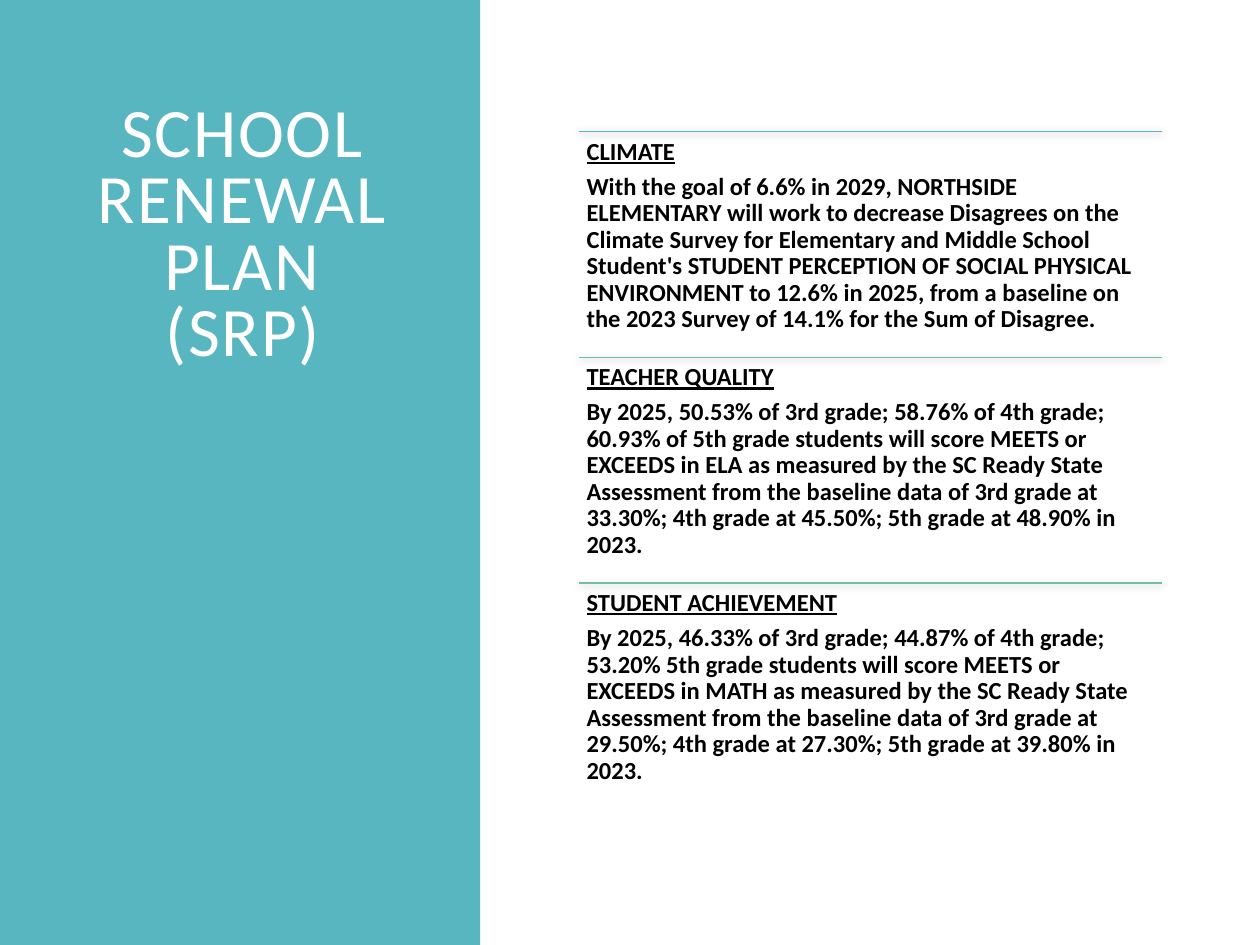
from dataclasses import dataclass
from lxml import etree
from pptx import Presentation
from pptx.dml.color import RGBColor as RGB
from pptx.enum import shapes, text
from pptx.oxml import ns
from pptx.util import Pt


@dataclass(frozen=True)
class Theme:
    font: str = "Calibri"
    teal: RGB = RGB(0x58, 0xB6, 0xC0)
    sea: RGB = RGB(0x67, 0xBE, 0xB5)
    green: RGB = RGB(0x75, 0xBD, 0xA7)
    white: RGB = RGB(255, 255, 255)
    black: RGB = RGB(0, 0, 0)
    head: float = 39.6
    body: float = 14


@dataclass(frozen=True)
class Box:
    left: float
    top: float
    wide: float
    high: float

    def pts(self):
        return [Pt(n) for n in (self.left, self.top, self.wide, self.high)]


THEME = Theme()
GOALS = [
    ("CLIMATE", THEME.teal,
     "With the goal of 6.6% in 2029, NORTHSIDE ELEMENTARY will work to "
     "decrease Disagrees on the Climate Survey for Elementary and Middle "
     "School Student's STUDENT PERCEPTION OF SOCIAL PHYSICAL ENVIRONMENT to "
     "12.6% in 2025, from a baseline on the 2023 Survey of 14.1% for the Sum "
     "of Disagree."),
    ("TEACHER QUALITY", THEME.sea,
     "By 2025, 50.53% of 3rd grade; 58.76% of 4th grade; 60.93% of 5th grade "
     "students will score MEETS or EXCEEDS in ELA as measured by the SC Ready "
     "State Assessment from the baseline data of 3rd grade at 33.30%; 4th "
     "grade at 45.50%; 5th grade at 48.90% in 2023."),
    ("STUDENT ACHIEVEMENT", THEME.green,
     "By 2025, 46.33% of 3rd grade; 44.87% of 4th grade; 53.20% 5th grade "
     "students will score MEETS or EXCEEDS in MATH as measured by the SC Ready "
     "State Assessment from the baseline data of 3rd grade at 29.50%; 4th "
     "grade at 27.30%; 5th grade at 39.80% in 2023."),
]


def inset(frame, side, top):
    frame.margin_left = frame.margin_right = Pt(side)
    frame.margin_top = frame.margin_bottom = Pt(top)
    frame.word_wrap = True
    frame.auto_size = text.MSO_AUTO_SIZE.NONE


def style(para, size, color, lead):
    para.font.name = THEME.font
    para.font.size = Pt(size)
    para.font.color.rgb = color
    para.line_spacing = lead


def shade(line):
    line._element.spPr.append(etree.fromstring(
        f'<a:effectLst {ns.nsdecls("a")}>'
        '<a:outerShdw blurRad="50800" dist="12700" dir="5400000" rotWithShape="0">'
        '<a:srgbClr val="000000"><a:alpha val="50000"/></a:srgbClr>'
        '</a:outerShdw></a:effectLst>'))


def banner(slide, box):
    panel = slide.shapes.add_shape(shapes.MSO_SHAPE.RECTANGLE, *box.pts())
    panel.shadow.inherit = False
    panel.fill.solid()
    panel.fill.fore_color.rgb = THEME.teal
    panel.line.fill.background()

    title = slide.shapes.title
    title.element.addprevious(panel.element)
    place = Box(box.left + 38, box.top + 50.4, 201.6, 438.4)
    title.left, title.top, title.width, title.height = place.pts()
    frame = title.text_frame
    frame.text = "SCHOOL RENEWAL PLAN (SRP)"
    inset(frame, 14, 9)
    frame.vertical_anchor = text.MSO_ANCHOR.TOP
    para = frame.paragraphs[0]
    para.alignment = text.PP_ALIGN.CENTER
    style(para, THEME.head, THEME.white, 0.8)
    para.runs[0].font._element.set("spc", "100")


def goal(group, box, name, color, words):
    y = Pt(box.top)
    line = group.shapes.add_connector(
        shapes.MSO_CONNECTOR.STRAIGHT, Pt(box.left), y, Pt(box.left + box.wide), y)
    line.line.color.rgb = color
    line.line.width = Pt(0.75)
    shade(line)

    frame = group.shapes.add_textbox(*box.pts()).text_frame
    inset(frame, 4.2, 4.2)
    frame.text = f"{name}\n{words}"
    for para in frame.paragraphs:
        style(para, THEME.body, THEME.black, 0.9)
        para.font.bold = True
        para.space_after = Pt(0.35 * THEME.body)
    frame.paragraphs[0].font.underline = True


def goals(slide, box):
    group = slide.shapes.add_group_shape()
    step = box.high / len(GOALS)
    for i, item in enumerate(GOALS):
        goal(group, Box(box.left, box.top + i * step, box.wide, step), *item)


def main():
    deck = Presentation()
    deck.slide_width, deck.slide_height = Pt(720), Pt(540)
    slide = deck.slides.add_slide(deck.slide_layouts[5])
    banner(slide, Box(0, 0, 274.4, 540))
    goals(slide, Box(331, 75.2, 333, 387))
    deck.save("out.pptx")


if __name__ == "__main__":
    main()
